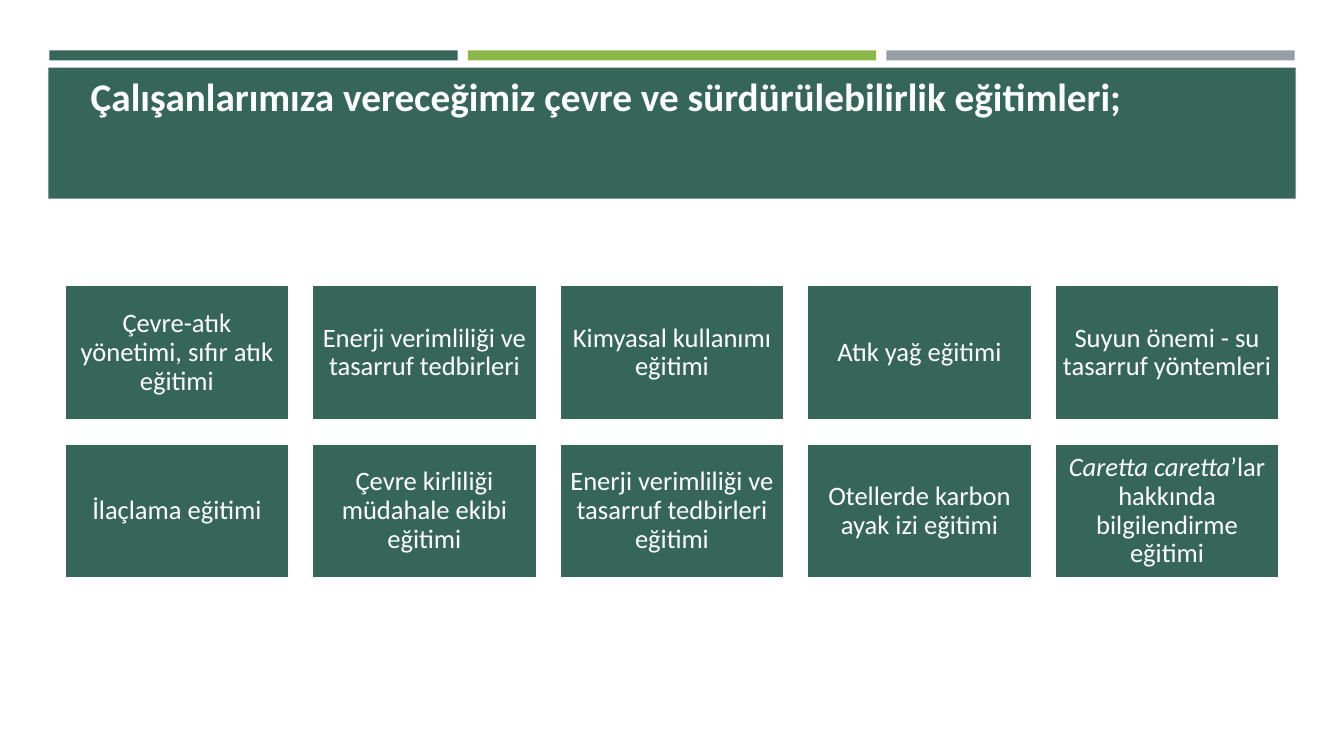
from pptx import Presentation
from pptx.dml.color import RGBColor
from pptx.enum.shapes import MSO_SHAPE
from pptx.enum.text import MSO_ANCHOR, MSO_AUTO_SIZE, PP_ALIGN
from pptx.util import Inches, Pt

GREEN, LIME, GREY, WHITE = "366658", "8CB64A", "969FA7", "FFFFFF"
FONT = "Calibri"
COLUMNS = 5
TITLE = "Çalışanlarımıza vereceğimiz çevre ve sürdürülebilirlik eğitimleri;"
TRAININGS = [
    [("Çevre-atık yönetimi, sıfır atık eğitimi", False)],
    [("Enerji verimliliği ve tasarruf tedbirleri", False)],
    [("Kimyasal kullanımı eğitimi", False)],
    [("Atık yağ eğitimi", False)],
    [("Suyun önemi - su tasarruf yöntemleri", False)],
    [("İlaçlama eğitimi", False)],
    [("Çevre kirliliği müdahale ekibi eğitimi", False)],
    [("Enerji verimliliği ve tasarruf tedbirleri eğitimi", False)],
    [("Otellerde karbon ayak izi eğitimi", False)],
    [("Caretta caretta", True), ("’lar hakkında bilgilendirme eğitimi", False)],
]


def color(value):
    """Turn a hex string into a colour."""
    return RGBColor.from_string(value)


def set_font(paragraph, size, bold=False):
    """Give a paragraph the slide's white lettering."""
    paragraph.font.name = FONT
    paragraph.font.size = Pt(size)
    paragraph.font.bold = bold
    paragraph.font.color.rgb = color(WHITE)


def add_rectangle(slide, left, top, width, height, fill):
    """Add a plain filled rectangle without an outline."""
    shape = slide.shapes.add_shape(
        MSO_SHAPE.RECTANGLE, Inches(left), Inches(top), Inches(width), Inches(height))
    shape.shadow.inherit = False
    shape.fill.solid()
    shape.fill.fore_color.rgb = color(fill)
    shape.line.fill.background()
    return shape


def add_training(slide, left, top, runs):
    """Add one training card with centred text."""
    card = add_rectangle(slide, left, top, 2.23, 1.34, GREEN)
    card.line.color.rgb = color(WHITE)
    card.line.width = Pt(1.75)
    frame = card.text_frame
    frame.word_wrap = True
    frame.vertical_anchor = MSO_ANCHOR.MIDDLE
    frame.margin_left = frame.margin_right = Inches(0.08)
    frame.margin_top = frame.margin_bottom = Inches(0.08)
    paragraph = frame.paragraphs[0]
    paragraph.alignment = PP_ALIGN.CENTER
    paragraph.line_spacing = 0.9
    set_font(paragraph, 19)
    for text, italic in runs:
        run = paragraph.add_run()
        run.text = text
        run.font.italic = italic


def place_title(slide):
    """Fill the title placeholder and bring it in front of the banner."""
    title = slide.shapes.title
    title.left, title.top = Inches(0.8), Inches(0.67)
    title.width, title.height = Inches(11.51), Inches(1.04)
    frame = title.text_frame
    frame.text = TITLE
    frame.word_wrap = True
    frame.auto_size = MSO_AUTO_SIZE.NONE
    frame.vertical_anchor = MSO_ANCHOR.TOP
    paragraph = frame.paragraphs[0]
    paragraph.alignment = PP_ALIGN.LEFT
    set_font(paragraph, 28, bold=True)
    title.element.getparent().append(title.element)


def main():
    """Build and save the slide."""
    presentation = Presentation()
    presentation.slide_width = Inches(13.33)
    presentation.slide_height = Inches(7.5)
    slide = presentation.slides.add_slide(presentation.slide_layouts[5])
    for index, fill in enumerate((GREEN, LIME, GREY)):
        add_rectangle(slide, 0.49 + 4.15 * index, 0.5, 4.05, 0.1, fill)
    add_rectangle(slide, 0.48, 0.67, 12.37, 1.3, GREEN)
    for index, runs in enumerate(TRAININGS):
        row, column = divmod(index, COLUMNS)
        add_training(slide, 0.64 + 2.455 * column, 2.83 + 1.57 * row, runs)
    place_title(slide)
    presentation.save("out.pptx")


if __name__ == "__main__":
    main()
